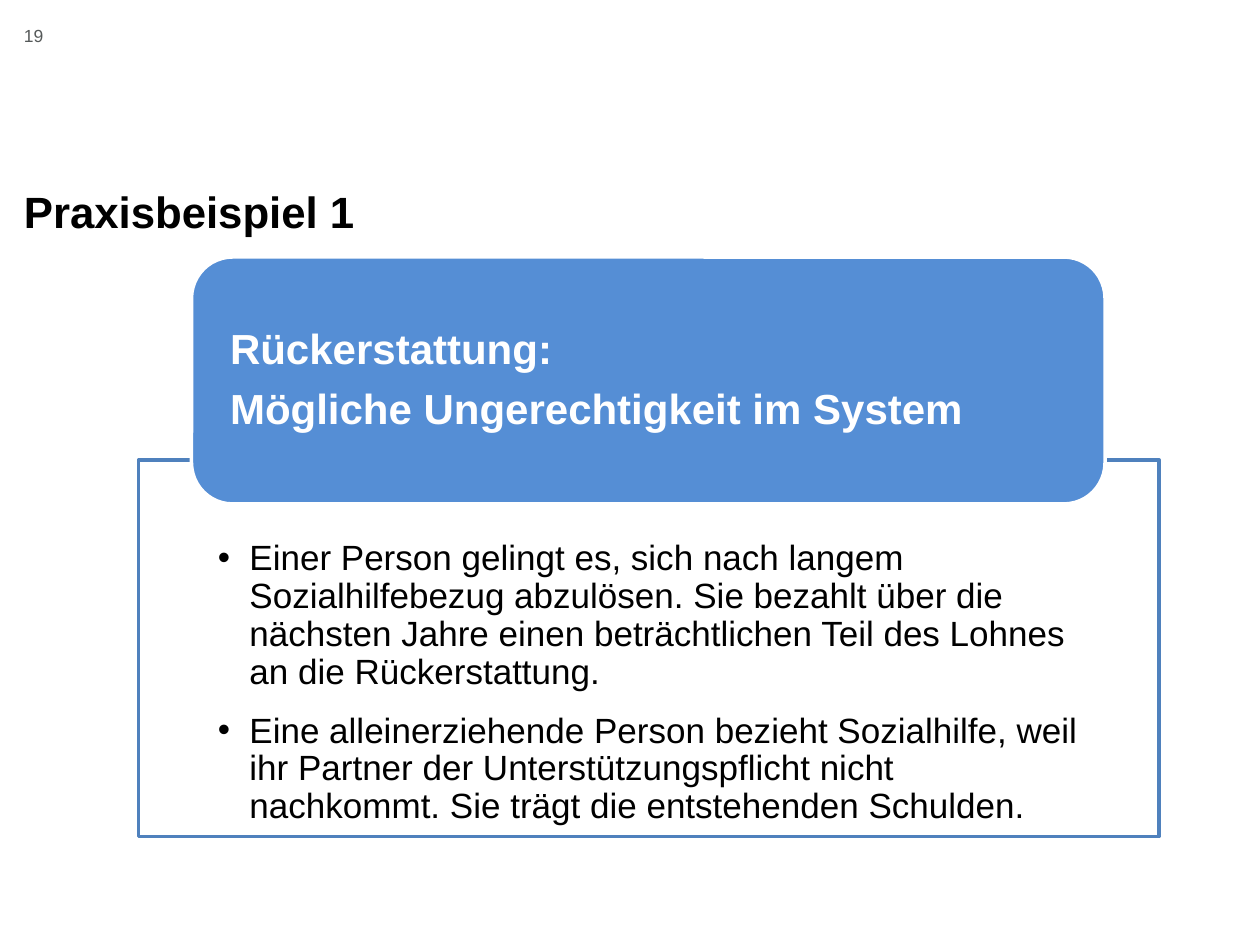
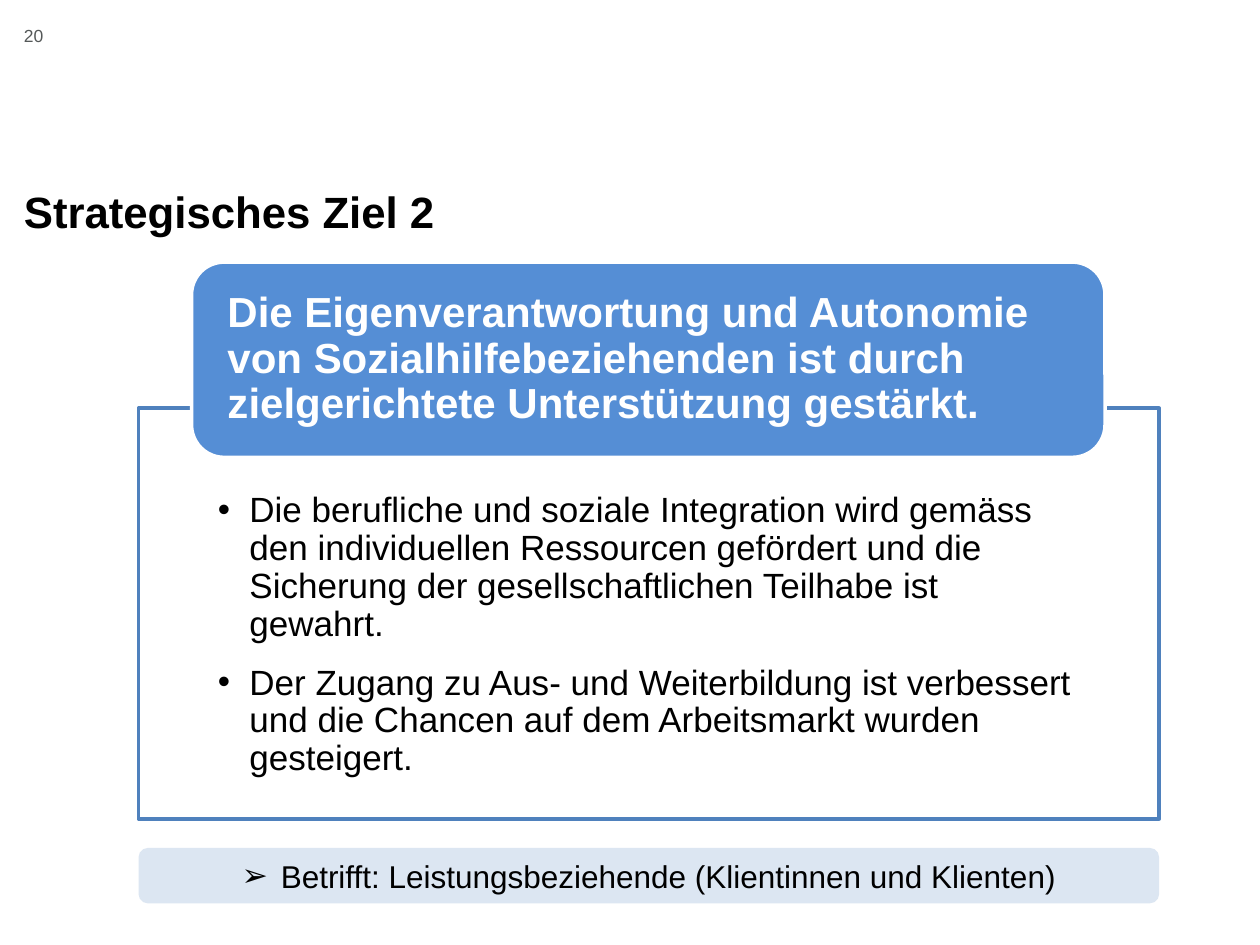
from lxml.etree import SubElement
from pptx import Presentation
from pptx.dml.color import RGBColor
from pptx.enum.shapes import MSO_SHAPE as SHAPE
from pptx.enum.text import MSO_ANCHOR as ANCHOR, PP_ALIGN as ALIGN
from pptx.oxml.ns import qn
from pptx.util import Inches, Pt

FONT = "Arial"
COLORS = {
    "text": "000000", "number": "555959", "white": "FFFFFF",
    "header": "558ED5", "border": "4F81BD", "bar": "DCE6F2",
}

# header and body are (top, height) in inches; body_inset is the space above the bullets
SLIDES = [
    {
        "number": "19",
        "title": "Praxisbeispiel 1",
        "header": (2.04, 1.96),
        "headline": ["Rückerstattung:", "Mögliche Ungerechtigkeit im System"],
        "body": (3.65, 2.99),
        "body_inset": 0.64,
        "bullets": [
            "Einer Person gelingt es, sich nach langem Sozialhilfebezug abzulösen. "
            "Sie bezahlt über die nächsten Jahre einen beträchtlichen Teil des Lohnes "
            "an die Rückerstattung.",
            "Eine alleinerziehende Person bezieht Sozialhilfe, weil ihr Partner der "
            "Unterstützungspflicht nicht nachkommt. Sie trägt die entstehenden Schulden.",
        ],
    },
    {
        "number": "20",
        "title": "Strategisches Ziel 2",
        "header": (2.08, 1.55),
        "headline": ["Die Eigenverantwortung und Autonomie von Sozialhilfebeziehenden "
                     "ist durch zielgerichtete Unterstützung gestärkt."],
        "body": (3.24, 3.26),
        "body_inset": 0.67,
        "bullets": [
            "Die berufliche und soziale Integration wird gemäss den individuellen "
            "Ressourcen gefördert und die Sicherung der gesellschaftlichen Teilhabe "
            "ist gewahrt.",
            "Der Zugang zu Aus- und Weiterbildung ist verbessert und die Chancen auf "
            "dem Arbeitsmarkt wurden gesteigert.",
        ],
        "affected": "Betrifft: Leistungsbeziehende (Klientinnen und Klienten)",
    },
]

LEFT_MARGIN = 0.19
BODY_X, BODY_W = 1.1, 8.1
HEADER_X, HEADER_W = 1.52, 7.25
BAR_Y, BAR_H = 6.73, 0.44


def rgb(name):
    return RGBColor.from_string(COLORS[name])


def add_box(s, kind, x, y, w, h, fill, line=None):
    sp = s.shapes.add_shape(kind, Inches(x), Inches(y), Inches(w), Inches(h))
    sp.shadow.inherit = False
    sp.fill.solid()
    sp.fill.fore_color.rgb = rgb(fill)
    if line:
        sp.line.color.rgb = rgb(line)
        sp.line.width = Pt(2)
    else:
        sp.line.fill.background()
    return sp


def add_bullet(p, char, indent):
    pPr = p._p.get_or_add_pPr()
    pPr.set("marL", str(Inches(indent)))
    pPr.set("indent", str(-Inches(indent)))
    SubElement(pPr, qn("a:buFont"), typeface=FONT)
    SubElement(pPr, qn("a:buChar"), char=char)


def write(sp, texts, size, color="text", bold=False, insets=(0, 0, 0, 0),
          anchor=ANCHOR.TOP, align=ALIGN.LEFT, spacing=1.0, gap=0, bullet=None):
    """Fill a shape with paragraphs; insets are left, top, right, bottom."""
    tf = sp.text_frame
    tf.word_wrap = True
    tf.vertical_anchor = anchor
    (tf.margin_left, tf.margin_top,
     tf.margin_right, tf.margin_bottom) = map(Inches, insets)
    for i, text in enumerate(texts):
        p = tf.paragraphs[0] if i == 0 else tf.add_paragraph()
        p.alignment = align
        p.line_spacing = spacing
        if i:
            p.space_before = Pt(gap)
        if bullet:
            add_bullet(p, *bullet)
        r = p.add_run()
        r.text = text
        r.font.name = FONT
        r.font.size = Pt(size)
        r.font.bold = bold
        r.font.color.rgb = rgb(color)


def add_frame(s, number, title):
    """Page number and title, the same on every slide."""
    box = s.shapes.add_textbox(Inches(LEFT_MARGIN), Inches(0.2), Inches(0.44), Inches(0.4))
    write(box, [number], 10, "number")
    box = s.shapes.add_textbox(Inches(LEFT_MARGIN), Inches(1.06), Inches(9.61), Inches(0.81))
    write(box, [title], 25, bold=True, anchor=ANCHOR.BOTTOM, spacing=0.7)


def build_slide(prs, content):
    s = prs.slides.add_slide(prs.slide_layouts[6])
    add_frame(s, content["number"], content["title"])

    top, height = content["body"]
    body = add_box(s, SHAPE.RECTANGLE, BODY_X, top, BODY_W, height, "white", "border")
    write(body, content["bullets"], 20, insets=(0.63, content["body_inset"], 0.63, 0.14),
          spacing=0.9, gap=12, bullet=("•", 0.25))

    top, height = content["header"]
    header = add_box(s, SHAPE.ROUNDED_RECTANGLE, HEADER_X, top, HEADER_W, height,
                     "header", "white")
    write(header, content["headline"], 24, "white", bold=True, insets=(0.21, 0, 0.21, 0),
          anchor=ANCHOR.MIDDLE, spacing=0.9, gap=8.4)

    if "affected" in content:
        bar = add_box(s, SHAPE.ROUNDED_RECTANGLE, BODY_X, BAR_Y, BODY_W, BAR_H, "bar")
        write(bar, [content["affected"]], 18, insets=(0.1, 0.05, 0.1, 0.05),
              anchor=ANCHOR.MIDDLE, align=ALIGN.CENTER, bullet=("➢", 0.31))


def main():
    prs = Presentation()
    prs.slide_width, prs.slide_height = Inches(10), Inches(7.5)
    for content in SLIDES:
        build_slide(prs, content)
    prs.save("out.pptx")


if __name__ == "__main__":
    main()
